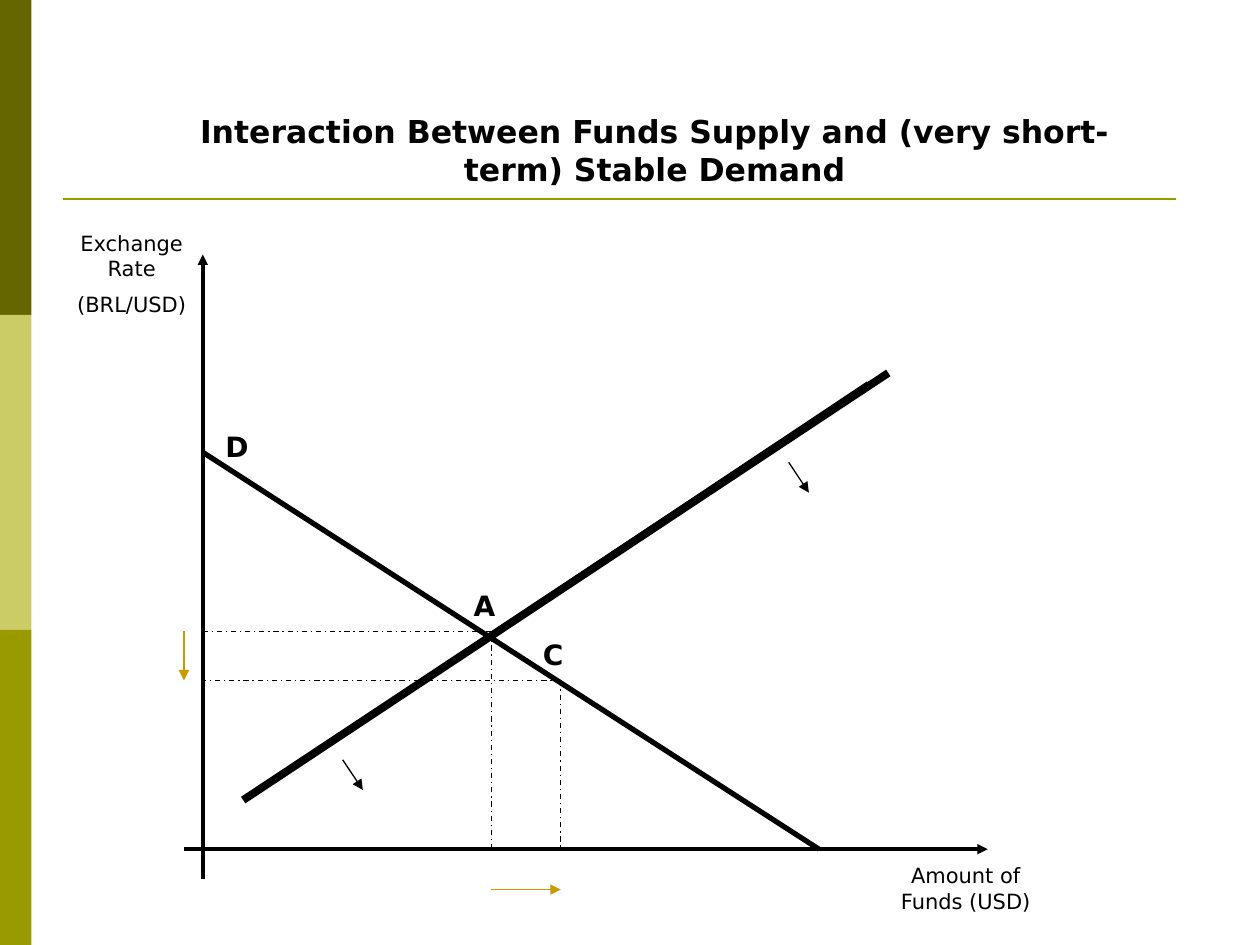
from typing import NamedTuple

from lxml.etree import SubElement
from pptx import Presentation
from pptx.dml.color import RGBColor
from pptx.enum.dml import MSO_LINE
from pptx.enum.shapes import MSO_CONNECTOR, MSO_SHAPE
from pptx.enum.text import MSO_ANCHOR, MSO_AUTO_SIZE, PP_ALIGN
from pptx.oxml.ns import qn
from pptx.util import Inches, Pt

FONT = "DejaVu Sans"
BLACK, OLIVE, GOLD = "000000", "999900", "CC9900"
COLS, ROWS = 100, 75  # grid laid over the slide

# Chart positions on the grid
AXIS_X, AXIS_Y = 16.1, 67.4
A_X, A_Y = 39, 50.1
C_X, C_Y = 44.5, 54
MARGIN_X, MARGIN_Y = 14.6, 70.6


class Line(NamedTuple):
    x1: float
    y1: float
    x2: float
    y2: float
    width: float = 0.75
    color: str = BLACK
    arrow: bool = False
    dashed: bool = False


class Label(NamedTuple):
    x: float
    y: float
    w: float
    h: float
    paragraphs: tuple[str, ...]
    size: int = 12
    bold: bool = False
    align: PP_ALIGN = PP_ALIGN.CENTER


def arrow(x1: float, y1: float, x2: float, y2: float, color: str = BLACK) -> Line:
    return Line(x1, y1, x2, y2, color=color, arrow=True)


def guides(x: float, y: float) -> list[Line]:
    """Dashed lines from a point to both axes."""
    return [Line(x, y, x, AXIS_Y, dashed=True), Line(x, y, AXIS_X, y, dashed=True)]


def point_label(x: float, y: float, letter: str) -> Label:
    return Label(x, y, 3.2, 3.7, (letter,), 16, True, PP_ALIGN.LEFT)


LINES = [
    Line(5, 15.8, 93.3, 15.8, 1.5, OLIVE),
    # Axes and their heads
    Line(AXIS_X, 21, AXIS_X, 69.8, 2.25),
    Line(MARGIN_X, AXIS_Y, 77.6, AXIS_Y, 2.25),
    arrow(76, AXIS_Y, 78.4, AXIS_Y),
    arrow(AXIS_X, 23.3, AXIS_X, 20.2),
    # Demand and supply
    Line(AXIS_X, 35.9, 65, AXIS_Y, 3),
    Line(21.6, 61.9, 68.9, 30.4, 2.25),
    Line(19.3, 63.5, 70.5, 29.6, 4.5),
    *guides(A_X, A_Y),
    *guides(C_X, C_Y),
    # Shift of supply and of the equilibrium
    arrow(27.2, 60.3, 28.8, 62.7),
    arrow(62.6, 36.7, 64.2, 39.1),
    arrow(A_X, MARGIN_Y, C_X, MARGIN_Y, GOLD),
    arrow(MARGIN_X, A_Y, MARGIN_X, C_Y, GOLD),
]

TITLE = Label(11.4, 8.4, 81.1, 7.1,
              ("Interaction Between Funds Supply and (very short-term) Stable Demand",),
              18, True)
LABELS = [
    point_label(16.9, 33.6, "D"),
    point_label(36.6, 46.2, "A"),
    point_label(42.1, 50.1, "C"),
    Label(4.7, 17.8, 11.5, 8.1, ("Exchange Rate", "(BRL/USD)")),
    Label(69.5, 68, 14.3, 5.1, ("Amount of Funds (USD)",)),
]
SIDE_BANDS = ("666600", "CCCC66", OLIVE)

prs = Presentation()
prs.slide_width, prs.slide_height = Inches(10), Inches(7.5)
s = prs.slides.add_slide(prs.slide_layouts[5])


def col(n: float) -> int:
    return round(prs.slide_width * n / COLS)


def row(n: float) -> int:
    return round(prs.slide_height * n / ROWS)


def rgb(color: str) -> RGBColor:
    return RGBColor.from_string(color)


def draw_band(index: int, color: str) -> None:
    h = ROWS / len(SIDE_BANDS)
    sp = s.shapes.add_shape(MSO_SHAPE.RECTANGLE, 0, row(index * h), col(2.5), row(h))
    sp.shadow.inherit = False
    sp.fill.solid()
    sp.fill.fore_color.rgb = rgb(color)
    sp.line.fill.background()


def draw_line(line: Line) -> None:
    sp = s.shapes.add_connector(MSO_CONNECTOR.STRAIGHT, col(line.x1), row(line.y1),
                                col(line.x2), row(line.y2))
    sp.line.width = Pt(line.width)
    sp.line.color.rgb = rgb(line.color)
    if line.dashed:
        sp.line.dash_style = MSO_LINE.DASH_DOT
    if line.arrow:
        SubElement(sp.line._get_or_add_ln(), qn("a:tailEnd"), type="triangle")
    SubElement(sp._element.spPr, qn("a:effectLst"))


def write(sp, label: Label) -> None:
    """Place a text shape and fill it with the label's paragraphs."""
    sp.left, sp.top = col(label.x), row(label.y)
    sp.width, sp.height = col(label.w), row(label.h)
    tf = sp.text_frame
    tf.word_wrap = True
    tf.auto_size = MSO_AUTO_SIZE.NONE
    tf.vertical_anchor = MSO_ANCHOR.TOP
    for i, text in enumerate(label.paragraphs):
        p = tf.add_paragraph() if i else tf.paragraphs[0]
        p.alignment = label.align
        p.space_before = Pt(label.size / 2 if i else 0)
        r = p.add_run()
        r.text = text
        r.font.name, r.font.size, r.font.bold = FONT, Pt(label.size), label.bold
        r.font.color.rgb = rgb(BLACK)


for i, color in enumerate(SIDE_BANDS):
    draw_band(i, color)
for line in LINES:
    draw_line(line)
write(s.shapes.title, TITLE)
for label in LABELS:
    write(s.shapes.add_textbox(0, 0, 0, 0), label)

prs.save("out.pptx")
